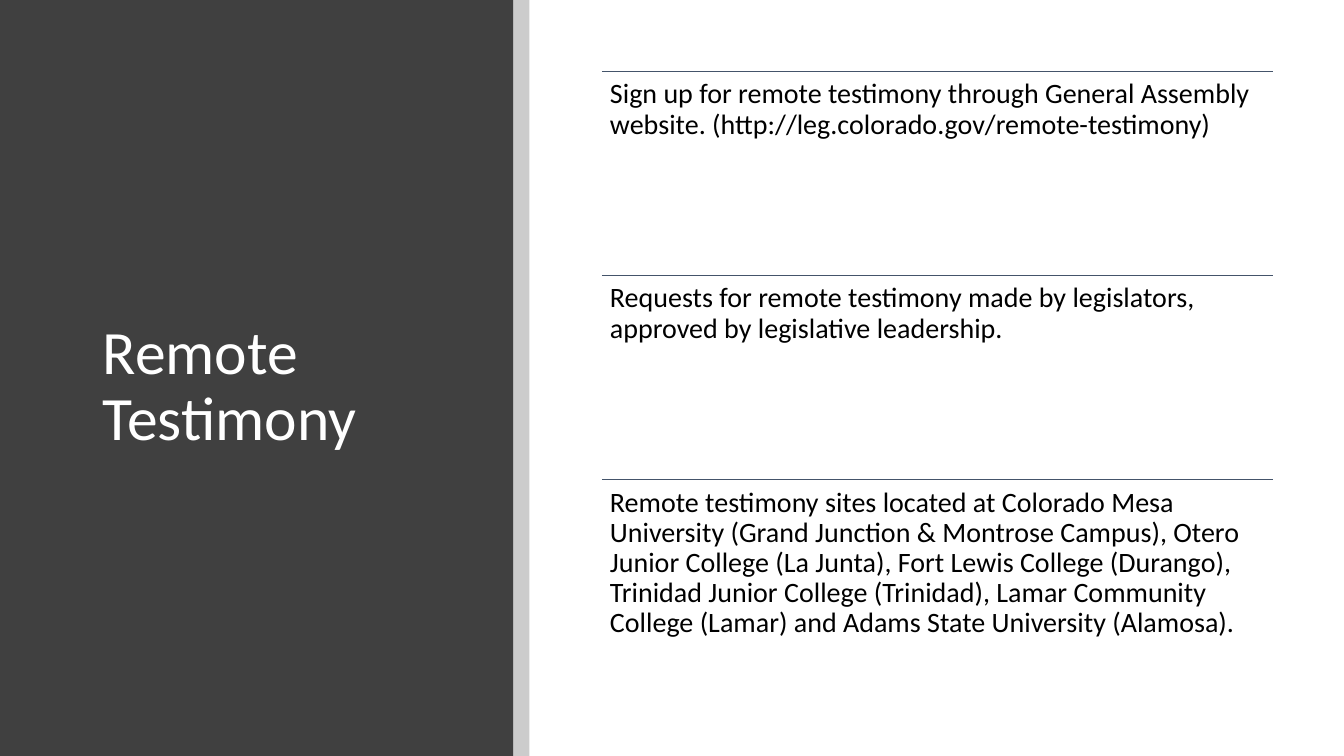
"""Build the Remote Testimony slide: a dark title panel beside three ruled statements."""
import pptx
import pptx.dml.color
import pptx.enum.shapes
import pptx.enum.text
import pptx.oxml
import pptx.oxml.ns
import pptx.util

Inches = pptx.util.Inches
Pt = pptx.util.Pt
RGBColor = pptx.dml.color.RGBColor
ANCHOR = pptx.enum.text.MSO_ANCHOR

CHARCOAL = RGBColor(0x40, 0x40, 0x40)
SLATE = RGBColor(0x44, 0x54, 0x6A)
WHITE = RGBColor(0xFF, 0xFF, 0xFF)
BLACK = RGBColor(0x00, 0x00, 0x00)

SLIDE_WIDTH, SLIDE_HEIGHT = 13.33, 7.5
PANEL_WIDTH, STRIP_WIDTH = 5.09, 0.16
LIST_LEFT, LIST_TOP, LIST_WIDTH = 5.97, 0.71, 6.66
ROW_HEIGHT = 4.05 / 2

TITLE_FORMAT = {"name": "Calibri", "size": Pt(44)}
STATEMENT_FORMAT = {"name": "Calibri", "size": Pt(20)}
TITLE_FRAME = {"word_wrap": True, "vertical_anchor": ANCHOR.MIDDLE}
STATEMENT_FRAME = {
    "word_wrap": True,
    "vertical_anchor": ANCHOR.TOP,
    "margin_left": Inches(0.08),
    "margin_top": Inches(0.08),
    "margin_right": Inches(0.08),
    "margin_bottom": Inches(0.08),
}
TITLE_SPACING = {"line_spacing": 0.9}
STATEMENT_SPACING = {"line_spacing": 0.9, "space_after": Pt(7)}

STATEMENTS = [
    "Sign up for remote testimony through General Assembly website. "
    "(http://leg.colorado.gov/remote-testimony)",
    "Requests for remote testimony made by legislators, "
    "approved by legislative leadership.",
    "Remote testimony sites located at Colorado Mesa University "
    "(Grand Junction & Montrose Campus), Otero Junior College (La Junta), "
    "Fort Lewis College (Durango), Trinidad Junior College (Trinidad), "
    "Lamar Community College (Lamar) and Adams State University (Alamosa).",
]


def apply_format(target, values):
    """Set each named attribute of the target."""
    for name, value in values.items():
        setattr(target, name, value)


def add_band(slide, left, width, color, opacity=None):
    """Add a full-height rectangle, with an opacity in percent if given."""
    shape = slide.shapes.add_shape(
        pptx.enum.shapes.MSO_SHAPE.RECTANGLE,
        Inches(left), Inches(0), Inches(width), Inches(SLIDE_HEIGHT),
    )
    shape.shadow.inherit = False
    shape.fill.solid()
    shape.fill.fore_color.rgb = color
    shape.line.fill.background()
    if opacity is not None:
        fill_color = shape.fill._xPr.find(".//" + pptx.oxml.ns.qn("a:srgbClr"))
        alpha = pptx.oxml.parse_xml(
            f'<a:alpha {pptx.oxml.ns.nsdecls("a")} val="{opacity * 1000}"/>'
        )
        fill_color.append(alpha)


def add_rule(slide, top):
    """Add a thin horizontal rule across the statement column."""
    connector = slide.shapes.add_connector(
        pptx.enum.shapes.MSO_CONNECTOR.STRAIGHT,
        Inches(LIST_LEFT), Inches(top), Inches(LIST_LEFT + LIST_WIDTH), Inches(top),
    )
    connector.line.color.rgb = SLATE
    connector.line.width = Pt(0.5)
    effects = pptx.oxml.parse_xml(f'<a:effectLst {pptx.oxml.ns.nsdecls("a")}/>')
    connector._element.spPr.append(effects)


def add_text(slide, box, text, color, font_format, frame_format, spacing):
    """Add a text box holding one formatted paragraph."""
    shape = slide.shapes.add_textbox(*(Inches(length) for length in box))
    apply_format(shape.text_frame, frame_format)
    paragraph = shape.text_frame.paragraphs[0]
    apply_format(paragraph, spacing)
    run = paragraph.add_run()
    run.text = text
    apply_format(run.font, font_format)
    run.font.color.rgb = color


def main():
    """Assemble and save the slide."""
    presentation = pptx.Presentation()
    presentation.slide_width = Inches(SLIDE_WIDTH)
    presentation.slide_height = Inches(SLIDE_HEIGHT)
    slide = presentation.slides.add_slide(presentation.slide_layouts[6])

    add_band(slide, 0, PANEL_WIDTH, CHARCOAL)
    add_text(slide, (0.92, 0.89, 3.65, 5.91), "Remote Testimony", WHITE,
             TITLE_FORMAT, TITLE_FRAME, TITLE_SPACING)
    add_band(slide, PANEL_WIDTH, STRIP_WIDTH, BLACK, opacity=20)

    for row, statement in enumerate(STATEMENTS):
        top = LIST_TOP + row * ROW_HEIGHT
        add_rule(slide, top)
        add_text(slide, (LIST_LEFT, top, LIST_WIDTH, ROW_HEIGHT), statement, BLACK,
                 STATEMENT_FORMAT, STATEMENT_FRAME, STATEMENT_SPACING)

    presentation.save("out.pptx")


if __name__ == "__main__":
    main()
